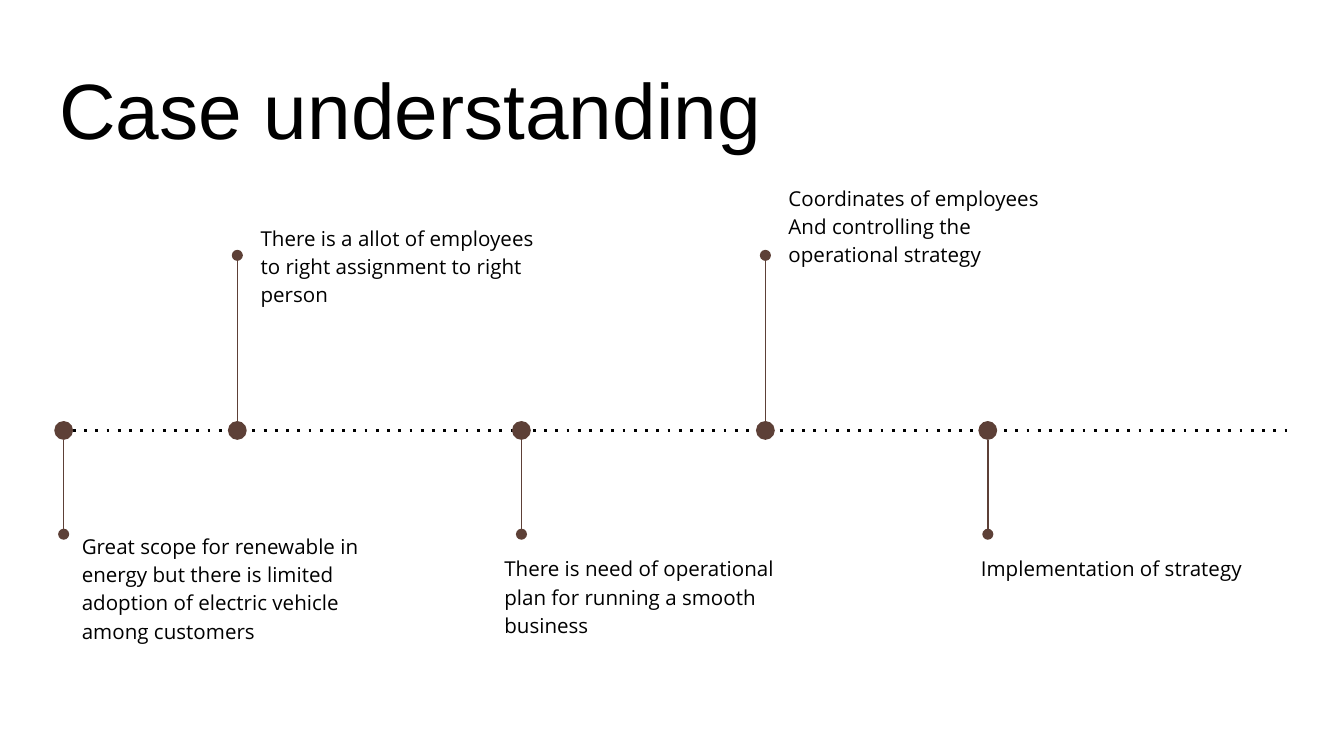
from dataclasses import dataclass

from lxml.etree import SubElement
from pptx import Presentation
from pptx.dml.color import RGBColor
from pptx.enum.shapes import MSO_CONNECTOR_TYPE as Connector, MSO_SHAPE as Preset
from pptx.enum.text import MSO_ANCHOR as Anchor
from pptx.oxml.ns import qn
from pptx.slide import Slide
from pptx.util import Inches, Length, Pt

BLACK, BROWN = "000000", "5D4037"
AXIS_ROW = 32.03
DOT = 1.4
STEM_END = {True: 19, False: 39.75}
STEM_START = {True: AXIS_ROW - DOT / 2, False: AXIS_ROW + DOT / 2}
NOTE_WIDTH, NOTE_HEIGHT = 23.8, 9.5


@dataclass(frozen=True)
class Milestone:
    """A point on the timeline with its note, placed in grid units."""
    column: float
    above: bool
    note_column: float
    note_row: float
    note: tuple[str, ...]


MILESTONES = (
    Milestone(4.74, False, 5.1, 38.43, (
        "Great scope for renewable in energy but there is limited "
        "adoption of electric vehicle among customers",)),
    Milestone(17.66, True, 18.4, 15.53, (
        "There is a allot of employees to right assignment to right person",)),
    Milestone(38.8, False, 36.54, 40.13, (
        "There is need of operational plan for running a smooth business",)),
    Milestone(56.95, True, 57.68, 12.53, (
        "Coordinates of employees", "And controlling the operational strategy")),
    Milestone(73.5, False, 72, 40.13, ("Implementation of strategy",)),
)


def grid(units: float) -> Length:
    """Convert grid units, a hundredth of the slide's width each, to a length."""
    return Inches(units / 10)


def colour(value: str) -> RGBColor:
    """Turn a hex string into a colour."""
    return RGBColor.from_string(value)


def add_text(slide: Slide, paragraphs: tuple[str, ...], left: float, top: float,
             width: float, height: float, *, font: str, size: float,
             anchor: Anchor = Anchor.TOP, spacing: float = 1.0) -> None:
    """Write paragraphs in a wrapped box with even insets."""
    box = slide.shapes.add_textbox(*map(grid, (left, top, width, height)))
    frame = box.text_frame
    frame.word_wrap = True
    frame.vertical_anchor = anchor
    frame.margin_left = frame.margin_right = grid(1)
    frame.margin_top = frame.margin_bottom = grid(1)
    frame.text = "\n".join(paragraphs)
    for paragraph in frame.paragraphs:
        paragraph.line_spacing = spacing
        for run in paragraph.runs:
            run.font.name = font
            run.font.size = Pt(size)
            run.font.color.rgb = colour(BLACK)


def add_line(slide: Slide, start: tuple[float, float], end: tuple[float, float],
             *, hue: str, weight: float, dash: str | None = None,
             tail: str | None = None) -> None:
    """Draw a straight line without shadow, with an optional dash and end mark."""
    line = slide.shapes.add_connector(Connector.STRAIGHT, *map(grid, start + end))
    line.line.color.rgb = colour(hue)
    line.line.width = Pt(weight)
    properties = line._element.spPr
    outline = properties.find(qn("a:ln"))
    if dash:
        SubElement(outline, qn("a:prstDash"), val=dash)
    if tail:
        SubElement(outline, qn("a:tailEnd"), type=tail)
    SubElement(properties, qn("a:effectLst"))


def add_milestone(slide: Slide, item: Milestone) -> None:
    """Draw the dot, the stem and the note of a milestone."""
    dot = slide.shapes.add_shape(
        Preset.OVAL, grid(item.column - DOT / 2), grid(AXIS_ROW - DOT / 2),
        grid(DOT), grid(DOT))
    dot.shadow.inherit = False
    dot.fill.solid()
    dot.fill.fore_color.rgb = colour(BROWN)
    dot.line.fill.background()
    add_line(slide, (item.column, STEM_START[item.above]),
             (item.column, STEM_END[item.above]),
             hue=BROWN, weight=0.75, tail="oval")
    add_text(slide, item.note, item.note_column, item.note_row,
             NOTE_WIDTH, NOTE_HEIGHT, font="Open Sans", size=11, spacing=1.15)


def main() -> None:
    """Build the timeline slide and save it."""
    deck = Presentation()
    deck.slide_width, deck.slide_height = Inches(10), Inches(10 * 9 / 16)
    slide = deck.slides.add_slide(deck.slide_layouts[6])
    add_line(slide, (4.6, AXIS_ROW), (95.8, AXIS_ROW),
             hue=BLACK, weight=1.5, dash="dot")
    add_text(slide, ("Case understanding",), 3.43, 3.43, 93.2, 9.1,
             font="Arial", size=42, anchor=Anchor.BOTTOM)
    for item in MILESTONES:
        add_milestone(slide, item)
    deck.save("out.pptx")


if __name__ == "__main__":
    main()
